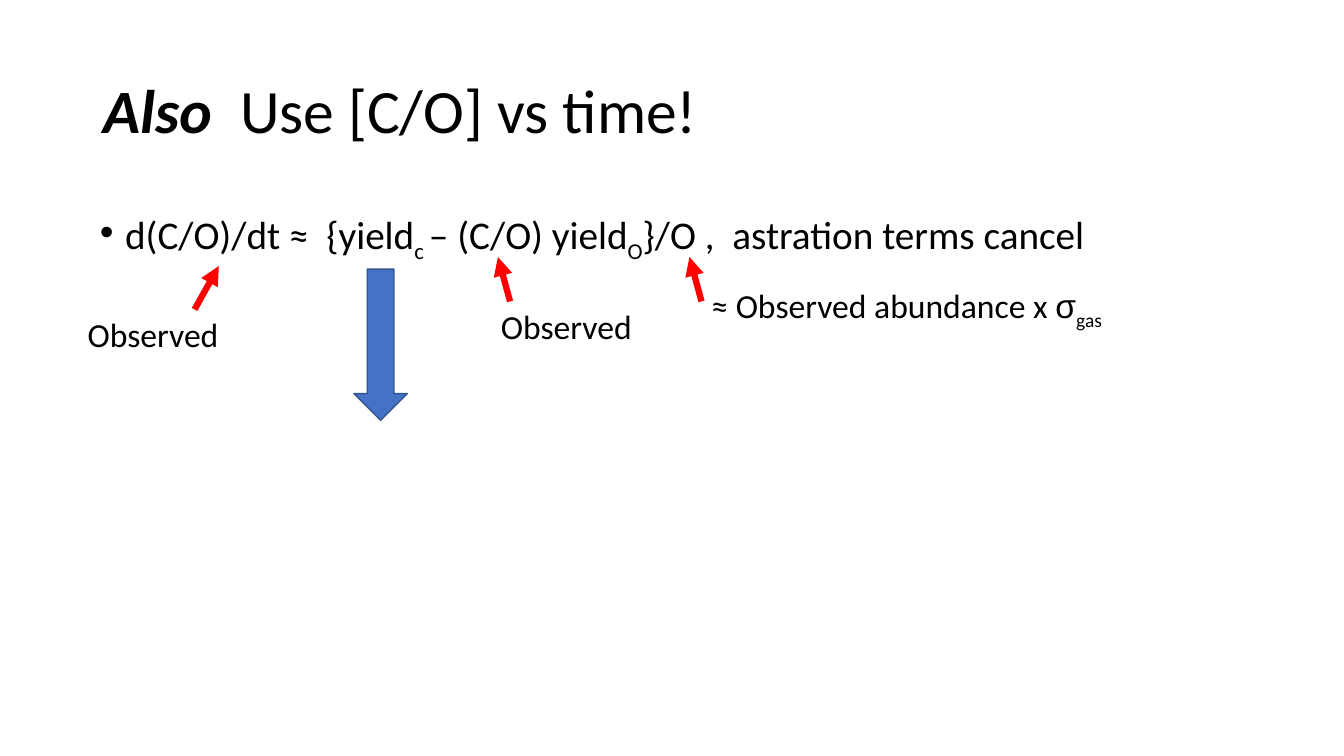
from pptx import Presentation
from pptx.dml.color import RGBColor
from pptx.enum.shapes import MSO_CONNECTOR, MSO_SHAPE
from pptx.enum.text import MSO_ANCHOR, MSO_AUTO_SIZE, PP_ALIGN
from pptx.oxml.ns import qn
from pptx.util import Inches, Pt
from lxml import etree

STRAIGHT, DOWN_ARROW = MSO_CONNECTOR.STRAIGHT, MSO_SHAPE.DOWN_ARROW
TOP, MIDDLE, LEFT = MSO_ANCHOR.TOP, MSO_ANCHOR.MIDDLE, PP_ALIGN.LEFT
NO_FIT, GROW = MSO_AUTO_SIZE.NONE, MSO_AUTO_SIZE.SHAPE_TO_FIT_TEXT

COLORS = {"text": "000000", "pointer": "FF0000", "block": "4472C4", "edge": "325491"}
FONT = "Calibri"
SUB = {"baseline": "-25000"}
PLAIN = {}


class SlideBuilder:
    """Holds the style and the slide; positions are percent of its size."""

    def __init__(self, prs):
        self.w, self.h = prs.slide_width, prs.slide_height
        self.s = prs.slides.add_slide(prs.slide_layouts[1])

    def x(self, share):
        return round(self.w * share / 100)

    def y(self, share):
        return round(self.h * share / 100)

    def box(self, left, top, width, height):
        return self.x(left), self.y(top), self.x(width), self.y(height)

    def color(self, name):
        return RGBColor.from_string(COLORS[name])

    def fill_text(self, tf, runs, size, frame, para):
        for name, value in frame.items():
            setattr(tf, name, value)
        p = tf.paragraphs[0]
        for name, value in para.items():
            setattr(p, name, value)
        for text, fmt in runs:
            r = p.add_run()
            r.text = text
            font = {"name": FONT, "size": Pt(size)} | fmt
            baseline = font.pop("baseline", None)
            for name, value in font.items():
                setattr(r.font, name, value)
            r.font.color.rgb = self.color("text")
            if baseline:
                r.font._element.set("baseline", baseline)
        return p

    def placeholder(self, idx, box, runs, size, anchor):
        sp = self.s.placeholders[idx]
        sp.left, sp.top, sp.width, sp.height = self.box(*box)
        frame = {"word_wrap": True, "auto_size": NO_FIT, "vertical_anchor": anchor}
        para = {"alignment": LEFT, "line_spacing": 0.9, "space_before": Pt(0)}
        return self.fill_text(sp.text_frame, runs, size, frame, para)

    def title(self, box, runs):
        self.placeholder(0, box, runs, 44, MIDDLE)

    def bullet(self, box, runs):
        pPr = self.placeholder(1, box, runs, 28, TOP)._p.get_or_add_pPr()
        pPr.set("marL", str(Inches(0.25)))
        pPr.set("indent", str(Inches(-0.25)))
        etree.SubElement(pPr, qn("a:buFont")).set("typeface", "Arial")
        etree.SubElement(pPr, qn("a:buChar")).set("char", "•")

    def label(self, left, top, width, runs):
        sp = self.s.shapes.add_textbox(*self.box(left, top, width, 6.67))
        frame = {"word_wrap": False, "auto_size": GROW}
        self.fill_text(sp.text_frame, runs, 24, frame, {"alignment": LEFT})

    def pointer(self, x1, y1, x2, y2):
        c = self.s.shapes.add_connector(
            STRAIGHT, self.x(x1), self.y(y1), self.x(x2), self.y(y2))
        c.line.color.rgb = self.color("pointer")
        c.line.width = Pt(4.5)
        spPr = c._element.spPr
        etree.SubElement(spPr.find(qn("a:ln")), qn("a:tailEnd")).set("type", "triangle")
        etree.SubElement(spPr, qn("a:effectLst"))

    def block_arrow(self, box):
        sp = self.s.shapes.add_shape(DOWN_ARROW, *self.box(*box))
        sp.shadow.inherit = False
        sp.fill.solid()
        sp.fill.fore_color.rgb = self.color("block")
        sp.line.color.rgb = self.color("edge")
        sp.line.width = Pt(1)


def main():
    prs = Presentation()
    prs.slide_width, prs.slide_height = Inches(13.33), Inches(7.5)
    b = SlideBuilder(prs)

    # Title and equation
    b.title((6.9, 5.33, 86.25, 19.33), [
        ("Also  ", {"bold": True, "italic": True}),
        ("Use [C/O] vs time!", PLAIN)])
    b.bullet((6.68, 27.2, 86.25, 63.47), [
        ("d(C/O)/dt ≈  {yield", PLAIN), ("c ", SUB),
        ("– (C/O) yield", PLAIN), ("O", SUB),
        ("}/O ,  astration terms cancel", PLAIN)])

    # Pointers to the terms
    for x in (52.2, 37.95):
        b.pointer(x, 39.87, x - 0.9, 34)
    b.pointer(14.48, 40.93, 16.28, 35.2)

    # Labels of the terms
    b.label(52.2, 37.07, 31.13, [
        ("≈ Observed abundance x ", PLAIN), ("σ", {"name": "Arial"}), ("gas", SUB)])
    for left, top in ((36.53, 39.87), (5.78, 40.93)):
        b.label(left, top, 11.33, [("Observed", PLAIN)])

    # Arrow below the carbon yield
    b.block_arrow((26.33, 35.6, 3.98, 20))

    prs.save("out.pptx")


if __name__ == "__main__":
    main()
